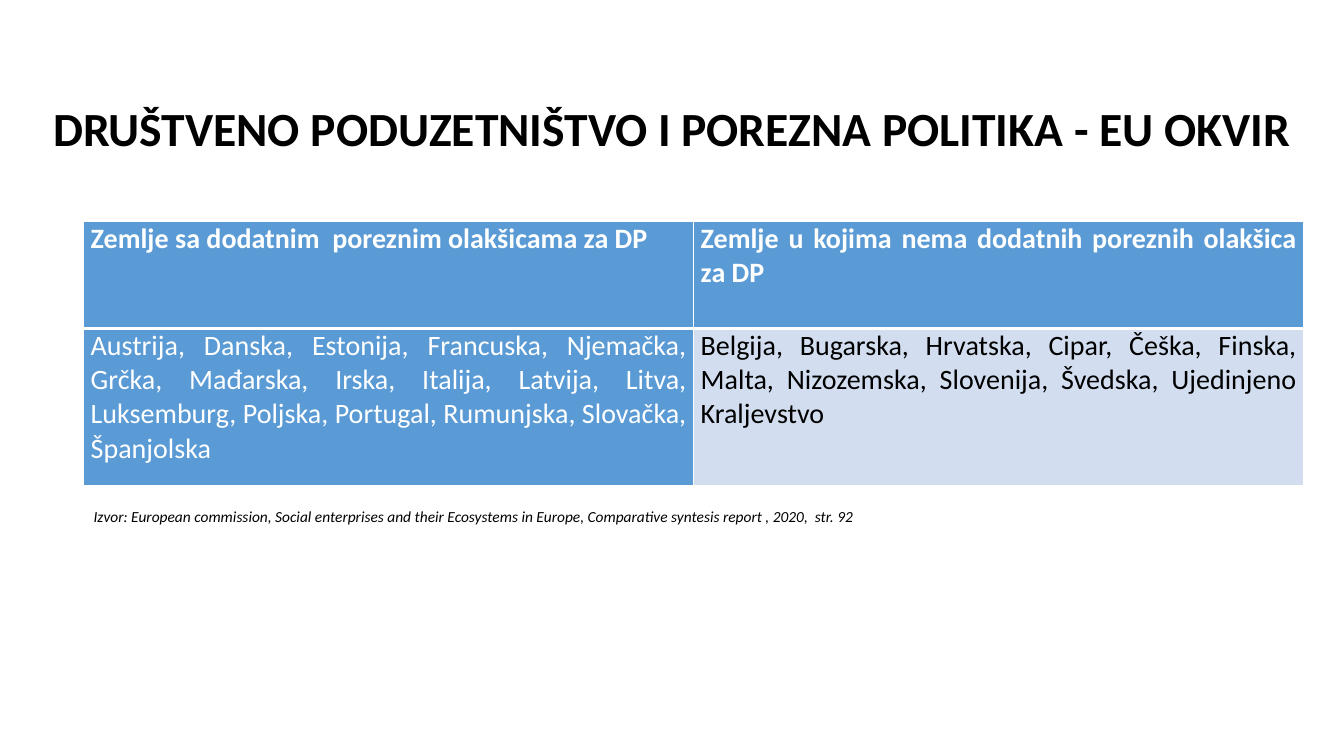
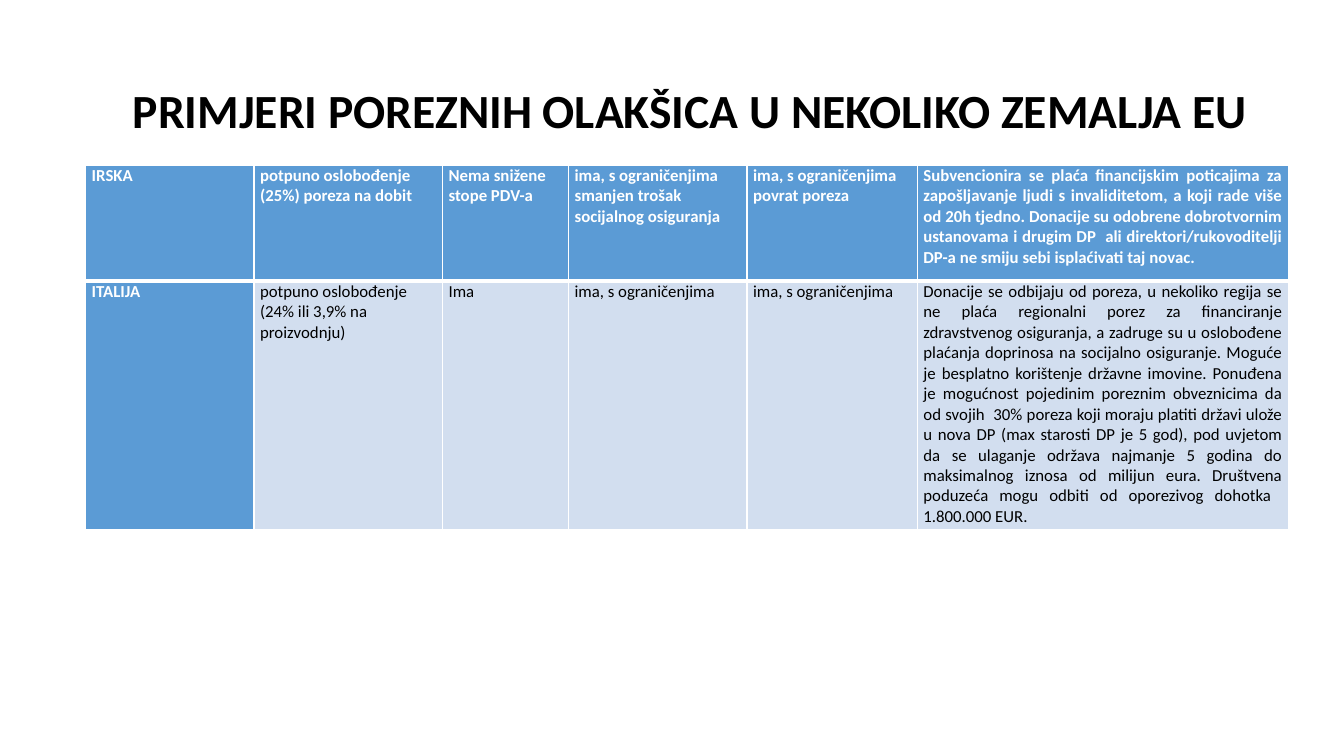
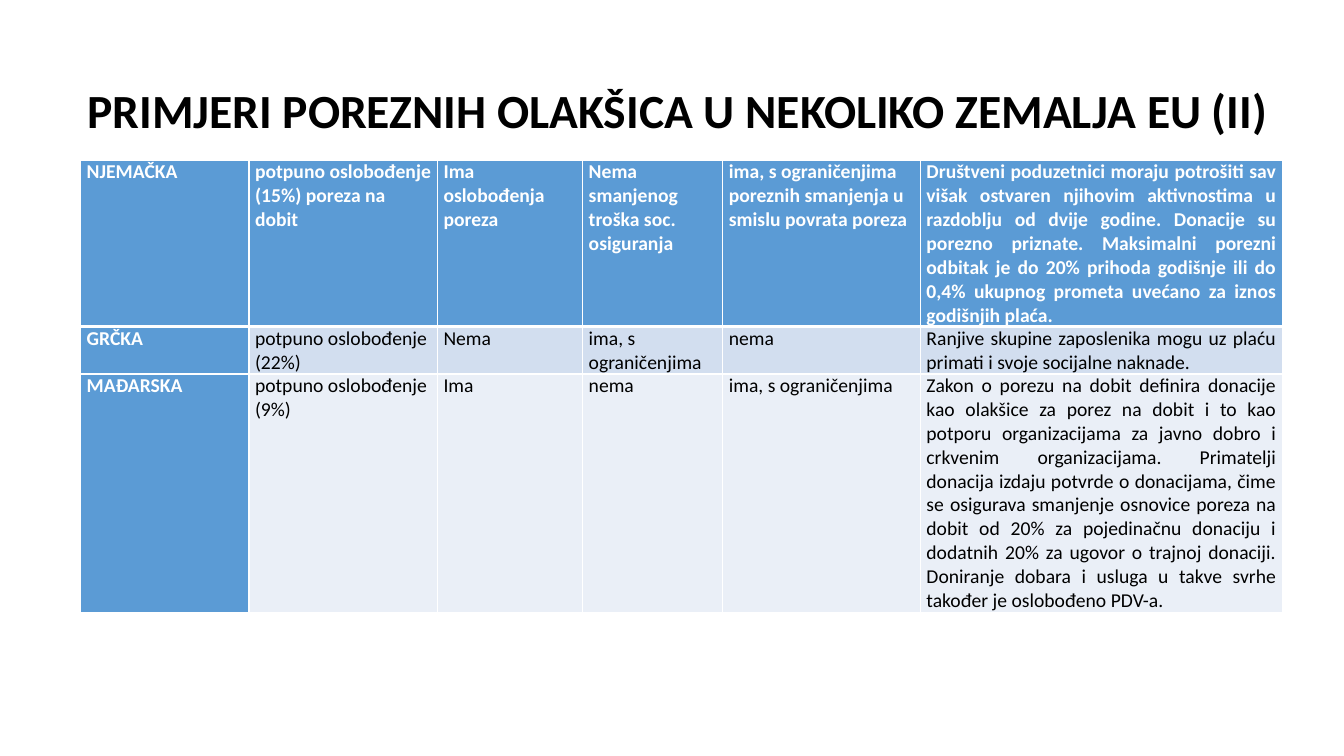
from lxml.etree import SubElement
from pptx import Presentation
from pptx.dml.color import RGBColor
from pptx.enum.text import MSO_ANCHOR, PP_ALIGN
from pptx.oxml.ns import qn
from pptx.util import Inches, Pt

FONT = "Calibri"
BLACK = RGBColor(0x00, 0x00, 0x00)
WHITE = RGBColor(0xFF, 0xFF, 0xFF)
BLUE = RGBColor(0x5B, 0x9B, 0xD5)
BANDS = (RGBColor(0xD2, 0xDE, 0xEF), RGBColor(0xEA, 0xEF, 0xF7))
SLIDE_WIDTH, SLIDE_HEIGHT = 13.33, 7.5

# Content: boxes are (left, top, width, height) in inches
SLIDES = [
    {
        "title": "DRUŠTVENO PODUZETNIŠTVO I POREZNA POLITIKA - EU OKVIR",
        "title_box": (0, 0.86, SLIDE_WIDTH, 0.89),
        "title_align": PP_ALIGN.CENTER,
        "table_at": (0.83, 2.2),
        "columns": (6.05, 6.05),
        "row_heights": (1.06, 1.56),
        "size": 20,
        "cell_inset": 0.07,
        "justified": (0, 1),
        "bold_first_column": False,
        "rows": [
            ("Zemlje sa dodatnim  poreznim olakšicama za DP",
             "Zemlje u kojima nema dodatnih poreznih olakšica za DP"),
            ("Austrija, Danska, Estonija, Francuska, Njemačka, Grčka, Mađarska, Irska, Italija, "
             "Latvija, Litva, Luksemburg, Poljska, Portugal, Rumunjska, Slovačka, Španjolska",
             "Belgija, Bugarska, Hrvatska, Cipar, Češka, Finska, Malta, Nizozemska, Slovenija, "
             "Švedska, Ujedinjeno Kraljevstvo"),
        ],
        "citation": "Izvor: European commission, Social enterprises and their Ecosystems in Europe, "
                    "Comparative syntesis report , 2020,  str. 92",
        "citation_box": (0.83, 4.98, 9.13, 0.29),
    },
    {
        "title": "PRIMJERI POREZNIH OLAKŠICA U NEKOLIKO ZEMALJA EU",
        "title_box": (1.22, 0.65, 11.5, 0.94),
        "title_align": PP_ALIGN.LEFT,
        "table_at": (0.85, 1.64),
        "columns": (1.67, 1.87, 1.25, 1.77, 1.69, 3.68),
        "row_heights": (1.15, 2.46),
        "size": 12,
        "cell_inset": 0.06,
        "justified": (5,),
        "bold_first_column": True,
        "rows": [
            ("IRSKA", "potpuno oslobođenje (25%) poreza na dobit", "Nema snižene stope PDV-a",
             "ima, s ograničenjima smanjen trošak socijalnog osiguranja",
             "ima, s ograničenjima povrat poreza",
             "Subvencionira se plaća financijskim poticajima za zapošljavanje ljudi s invaliditetom, "
             "a koji rade više od 20h tjedno. Donacije su odobrene dobrotvornim ustanovama i drugim "
             "DP  ali direktori/rukovoditelji DP-a ne smiju sebi isplaćivati taj novac."),
            ("ITALIJA", "potpuno oslobođenje (24% ili 3,9% na proizvodnju)", "Ima",
             "ima, s ograničenjima", "ima, s ograničenjima",
             "Donacije se odbijaju od poreza, u nekoliko regija se ne plaća regionalni porez za "
             "financiranje zdravstvenog osiguranja, a zadruge su u oslobođene plaćanja doprinosa na "
             "socijalno osiguranje. Moguće je besplatno korištenje državne imovine. Ponuđena je "
             "mogućnost pojedinim poreznim obveznicima da od svojih  30% poreza koji moraju platiti "
             "državi ulože u nova DP (max starosti DP je 5 god), pod uvjetom da se ulaganje održava "
             "najmanje 5 godina do maksimalnog iznosa od milijun eura. Društvena poduzeća mogu "
             "odbiti od oporezivog dohotka  1.800.000 EUR."),
        ],
    },
    {
        "title": "PRIMJERI POREZNIH OLAKŠICA U NEKOLIKO ZEMALJA EU (II)",
        "title_box": (0.11, 0.76, 13.22, 0.72),
        "title_align": PP_ALIGN.CENTER,
        "table_at": (0.8, 1.59),
        "columns": (1.67, 1.87, 1.44, 1.39, 1.96, 3.59),
        "row_heights": (1.65, 0.47, 2.37),
        "size": 14,
        "cell_inset": 0.06,
        "justified": (5,),
        "bold_first_column": True,
        "rows": [
            ("NJEMAČKA", "potpuno oslobođenje (15%) poreza na dobit", "Ima oslobođenja poreza",
             "Nema smanjenog troška soc. osiguranja",
             "ima, s ograničenjima poreznih smanjenja u smislu povrata poreza",
             "Društveni poduzetnici moraju potrošiti sav višak ostvaren njihovim aktivnostima u "
             "razdoblju od dvije godine. Donacije su porezno priznate. Maksimalni porezni odbitak je "
             "do 20% prihoda godišnje ili do 0,4% ukupnog prometa uvećano za iznos godišnjih plaća."),
            ("GRČKA", "potpuno oslobođenje (22%)", "Nema", "ima, s ograničenjima", "nema",
             "Ranjive skupine zaposlenika mogu uz plaću primati i svoje socijalne naknade."),
            ("MAĐARSKA", "potpuno oslobođenje (9%)", "Ima", "nema", "ima, s ograničenjima",
             "Zakon o porezu na dobit definira donacije kao olakšice za porez na dobit i to kao "
             "potporu organizacijama za javno dobro i crkvenim organizacijama. Primatelji donacija "
             "izdaju potvrde o donacijama, čime se osigurava smanjenje osnovice poreza na dobit od "
             "20% za pojedinačnu donaciju i dodatnih 20% za ugovor o trajnoj donaciji. Doniranje "
             "dobara i usluga u takve svrhe također je oslobođeno PDV-a."),
        ],
    },
]


def write_text(frame, text, size, color=BLACK, bold=False, italic=False,
               align=PP_ALIGN.LEFT, line_spacing=None):
    paragraph = frame.paragraphs[0]
    paragraph.alignment = align
    if line_spacing:
        paragraph.line_spacing = line_spacing
    run = paragraph.add_run()
    run.text = text
    run.font.name = FONT
    run.font.size = Pt(size)
    run.font.color.rgb = color
    run.font.bold = bold
    run.font.italic = italic


def add_text_box(slide, box, text, **text_format):
    frame = slide.shapes.add_textbox(*map(Inches, box)).text_frame
    frame.word_wrap = True
    frame.vertical_anchor = MSO_ANCHOR.MIDDLE
    write_text(frame, text, **text_format)


def set_borders(cell, widths):
    properties = cell._tc.get_or_add_tcPr()
    for side, width in widths.items():
        line = SubElement(properties, qn(f"a:ln{side}"), w=str(Pt(width)))
        fill = SubElement(line, qn("a:solidFill"))
        SubElement(fill, qn("a:srgbClr"), val=str(WHITE))


def add_table(slide, content):
    rows, columns, heights = content["rows"], content["columns"], content["row_heights"]
    left, top = content["table_at"]
    table = slide.shapes.add_table(
        len(rows), len(columns), Inches(left), Inches(top),
        Inches(sum(columns)), Inches(sum(heights))).table
    table.horz_banding = False
    for column, width in zip(table.columns, columns):
        column.width = Inches(width)
    for row_index, (row, height) in enumerate(zip(rows, heights)):
        table.rows[row_index].height = Inches(height)
        is_header = row_index == 0
        # The thick rule under the header is shared with the row below
        borders = {"L": 1, "R": 1, "T": 3 if row_index == 1 else 1, "B": 3 if is_header else 1}
        for column_index, text in enumerate(row):
            cell = table.cell(row_index, column_index)
            is_label = is_header or column_index == 0
            set_borders(cell, borders)
            cell.fill.solid()
            cell.fill.fore_color.rgb = BLUE if is_label else BANDS[(row_index - 1) % 2]
            cell.margin_left = cell.margin_right = Inches(content["cell_inset"])
            cell.margin_top = cell.margin_bottom = 0
            write_text(
                cell.text_frame, text, content["size"],
                color=WHITE if is_label else BLACK,
                bold=is_header or (is_label and content["bold_first_column"]),
                align=PP_ALIGN.JUSTIFY if column_index in content["justified"] else PP_ALIGN.LEFT)


def main():
    presentation = Presentation()
    presentation.slide_width = Inches(SLIDE_WIDTH)
    presentation.slide_height = Inches(SLIDE_HEIGHT)
    for content in SLIDES:
        slide = presentation.slides.add_slide(presentation.slide_layouts[6])
        add_text_box(slide, content["title_box"], content["title"], size=34, bold=True,
                     align=content["title_align"], line_spacing=0.9)
        add_table(slide, content)
        if "citation" in content:
            add_text_box(slide, content["citation_box"], content["citation"], size=11,
                         italic=True, align=PP_ALIGN.JUSTIFY)
    presentation.save("out.pptx")


if __name__ == "__main__":
    main()
